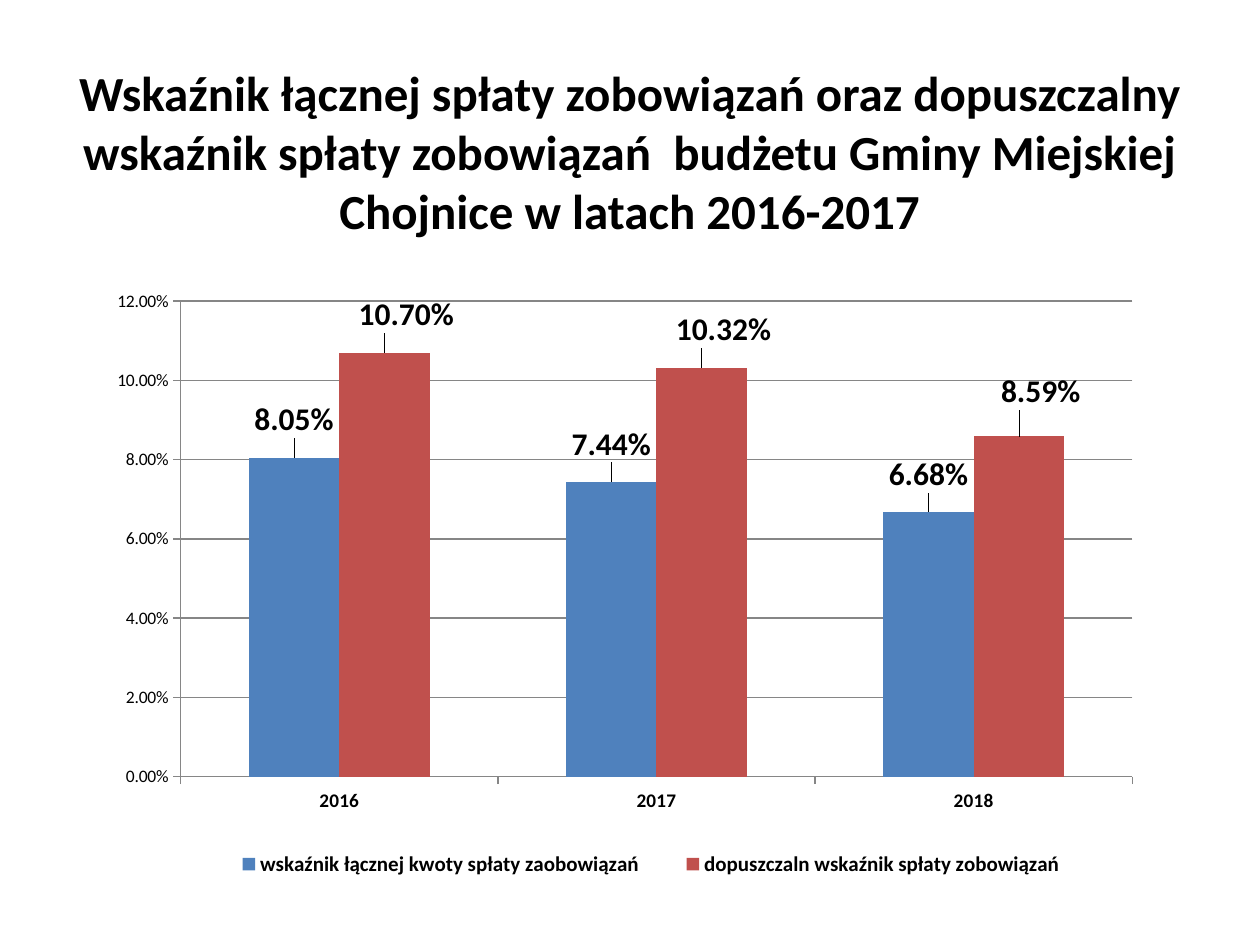
from lxml.etree import SubElement
from pptx import Presentation
from pptx.chart.data import CategoryChartData
from pptx.dml.color import RGBColor
from pptx.enum.chart import XL_CHART_TYPE, XL_LABEL_POSITION, XL_LEGEND_POSITION, XL_TICK_MARK
from pptx.enum.text import MSO_ANCHOR, PP_ALIGN
from pptx.oxml.ns import qn
from pptx.util import Cm, Pt


def color(hex_text):
    return RGBColor.from_string(hex_text)


def place(layout, **settings):
    """Write a manual chart layout, in fractions of the chart."""
    manual = SubElement(layout, qn("c:manualLayout"))
    for tag, value in settings.items():
        SubElement(manual, qn(f"c:{tag}")).set("val", str(value))


prs = Presentation()
prs.slide_width, prs.slide_height = Cm(25.4), Cm(19.05)
slide = prs.slides.add_slide(prs.slide_layouts[0])
subtitle = slide.placeholders[1].element
subtitle.getparent().remove(subtitle)

# Title
title = slide.shapes.title
title.left, title.top, title.width, title.height = Cm(1.3), Cm(0.74), Cm(22.78), Cm(4.6)
title.text_frame.word_wrap = True
title.text_frame.vertical_anchor = MSO_ANCHOR.MIDDLE
heading = title.text_frame.paragraphs[0]
heading.alignment = PP_ALIGN.CENTER
run = heading.add_run()
run.text = ("Wskaźnik łącznej spłaty zobowiązań oraz dopuszczalny wskaźnik spłaty "
            "zobowiązań  budżetu Gminy Miejskiej Chojnice w latach 2016-2017")
run.font.name, run.font.size, run.font.bold = "Calibri", Pt(28), True
run.font.color.rgb = color("000000")

# Repayment ratios: name, values, colour, label shifts
ratios = [
    ("wskaźnik łącznej kwoty spłaty zaobowiązań", (0.0805, 0.0744, 0.0668), "4F81BD",
     [(0, -0.02), (0, -0.02), (0, -0.02)]),
    ("dopuszczaln wskaźnik spłaty zobowiązań", (0.107, 0.1032, 0.0859), "C0504D",
     [(0.02, -0.02), (0.02, -0.02), (0.02, -0.03)]),
]
ratio_data = CategoryChartData(number_format="0.00%")
ratio_data.categories = ["2016", "2017", "2018"]
for name, values, _, _ in ratios:
    ratio_data.add_series(name, values)
chart = slide.shapes.add_chart(
    XL_CHART_TYPE.COLUMN_CLUSTERED, Cm(1.9), Cm(4.52), Cm(21.8), Cm(14.1), ratio_data).chart
chart.has_title = False
chart.font.name, chart.font.size = "Calibri", Pt(10)
chart.font.color.rgb = color("000000")

# Columns and their labels
plot = chart.plots[0]
plot.gap_width, plot.overlap, plot.vary_by_categories = 150, 0, False
for series, (_, _, fill, shifts) in zip(plot.series, ratios):
    series.format.fill.solid()
    series.format.fill.fore_color.rgb = color(fill)
    series.data_labels.show_value = True
    series.data_labels.font.size, series.data_labels.font.bold = Pt(18), True
    for index, (x, y) in enumerate(shifts):
        label = series.points[index].data_label
        label.font.size, label.font.bold = Pt(18), True
        label.position = XL_LABEL_POSITION.OUTSIDE_END
    for point_label, (x, y) in zip(series.data_labels._element.findall(qn("c:dLbl")), shifts):
        layout = SubElement(point_label, qn("c:layout"))
        point_label.insert(1, layout)
        place(layout, x=x, y=y)

# Axes
years, percent = chart.category_axis, chart.value_axis
percent.minimum_scale, percent.maximum_scale, percent.major_unit = 0, 0.12, 0.02
percent.tick_labels.number_format = "0.00%"
percent.tick_labels.number_format_is_linked = False
percent.has_major_gridlines = True
years.tick_labels.font.size, years.tick_labels.font.bold = Pt(11), True
for axis in (years, percent):
    axis.major_tick_mark = XL_TICK_MARK.OUTSIDE
for ruled in (years, percent, percent.major_gridlines):
    ruled.format.line.color.rgb = color("868686")
    ruled.format.line.width = Pt(0.75)

# Legend
chart.has_legend = True
legend = chart.legend
legend.position = XL_LEGEND_POSITION.RIGHT
legend.include_in_layout = False
legend.font.size, legend.font.bold = Pt(12), True
legend_layout = legend._element.find(qn("c:layout"))
if legend_layout is None:
    legend_layout = SubElement(legend._element, qn("c:layout"))
    legend._element.insert(1, legend_layout)
place(legend_layout, xMode="edge", yMode="edge", x=0.1, y=0.88, w=0.83, h=0.07)

# Plot area
plot_area = chart._chartSpace.chart.plotArea
plot_layout = plot_area.find(qn("c:layout"))
if plot_layout is None:
    plot_layout = SubElement(plot_area, qn("c:layout"))
    plot_area.insert(0, plot_layout)
place(plot_layout, layoutTarget="inner", xMode="edge", yMode="edge",
      x=0.08, y=0.11, w=0.88, h=0.68)

prs.save("out.pptx")
